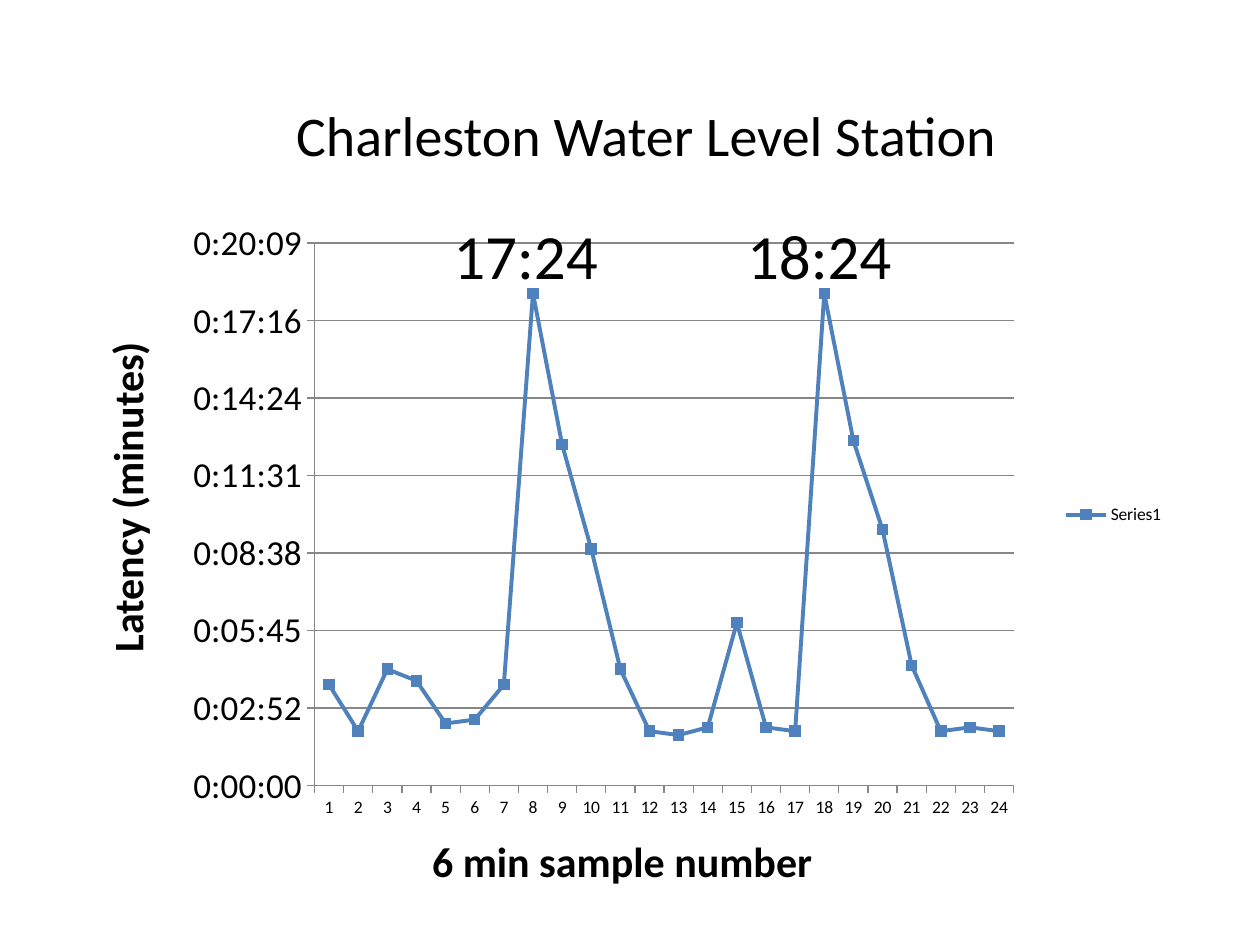
"""Build the slide charting water level latency per six-minute sample."""
from lxml.etree import SubElement
from pptx import Presentation
from pptx.chart.data import CategoryChartData
from pptx.dml.color import RGBColor as RGB
from pptx.enum.chart import XL_CHART_TYPE as CT, XL_LEGEND_POSITION as LP
from pptx.enum.chart import XL_MARKER_STYLE as MS, XL_TICK_MARK as TM
from pptx.enum.text import MSO_AUTO_SIZE as AS
from pptx.oxml.ns import qn
from pptx.util import Cm, Pt

FONT = "Calibri"
COLORS = {"text": "000000", "series": "4F81BD", "grid": "878787"}
LATENCY = [
    0.0026, 0.0014, 0.003, 0.0027, 0.0016, 0.0017, 0.0026, 0.0127,
    0.0088, 0.0061, 0.003, 0.0014, 0.0013, 0.0015, 0.0042, 0.0015,
    0.0014, 0.0127, 0.0089, 0.0066, 0.0031, 0.0014, 0.0015, 0.0014,
]
CHART_BOX = (2.34, 3.81, 21.39, 13.13)
PLOT = {"x": 0.187, "y": 0.083, "w": 0.659, "h": 0.833}
LABELS = [
    ("Charleston Water Level Station", (5.72, 1.9, 14.78, 1.63), 32, False, 0),
    ("17:24", (8.89, 4.24, 3.45, 1.8), 36, False, 0),
    ("18:24", (14.81, 4.24, 3.45, 1.8), 36, False, 0),
    ("6 min sample number", (8.46, 16.71, 8.26, 1.27), 24, True, 0),
    ("Latency (minutes)", (-0.86, 9.35, 6.83, 1.27), 24, True, 270),
]


def color(name):
    return RGB.from_string(COLORS[name])


def style_font(font, size, bold=False):
    font.name, font.size, font.bold = FONT, Pt(size), bold
    font.color.rgb = color("text")


def style_line(line, name, width):
    line.color.rgb = color(name)
    line.width = Pt(width)


def place_plot(chart):
    area = chart._chartSpace.chart.plotArea
    for old in area.findall(qn("c:layout")):
        area.remove(old)
    layout = SubElement(area, qn("c:layout"))
    area.insert(0, layout)
    manual = SubElement(layout, qn("c:manualLayout"))
    settings = [("layoutTarget", "inner"), ("xMode", "edge"), ("yMode", "edge")]
    for tag, val in settings + list(PLOT.items()):
        SubElement(manual, qn(f"c:{tag}")).set("val", str(val))


def add_latency_chart(s):
    data = CategoryChartData(number_format="h:mm:ss;@")
    data.categories = [str(n) for n in range(1, len(LATENCY) + 1)]
    data.add_series("Series1", LATENCY)
    chart = s.shapes.add_chart(CT.LINE_MARKERS, *map(Cm, CHART_BOX), data).chart
    style_font(chart.font, 10)
    chart.has_title = False
    chart.has_legend = True
    chart.legend.position = LP.RIGHT
    chart.legend.include_in_layout = False
    place_plot(chart)

    cat, val = chart.category_axis, chart.value_axis
    for axis, size in ((cat, 10), (val, 20)):
        axis.major_tick_mark = TM.CROSS if axis is None else TM.OUTSIDE
        axis.minor_tick_mark = TM.NONE
        style_font(axis.tick_labels.font, size)
        style_line(axis.format.line, "grid", 0.75)
    val.minimum_scale, val.maximum_scale, val.major_unit = 0, 0.014, 0.002
    val.tick_labels.number_format = "h:mm:ss;@"
    val.tick_labels.number_format_is_linked = False
    val.has_major_gridlines = True
    style_line(val.major_gridlines.format.line, "grid", 0.75)

    plot = chart.plots[0]
    plot.vary_by_categories = False
    series = plot.series[0]
    series.smooth = False
    style_line(series.format.line, "series", 2.25)
    marker = series.marker
    marker.style, marker.size = MS.SQUARE, 6
    marker.format.fill.solid()
    marker.format.fill.fore_color.rgb = color("series")
    style_line(marker.format.line, "series", 0.75)


def add_label(s, text, box, size, bold, rotation):
    sp = s.shapes.add_textbox(*map(Cm, box))
    sp.rotation = rotation
    tf = sp.text_frame
    tf.word_wrap = False
    tf.auto_size = AS.SHAPE_TO_FIT_TEXT
    r = tf.paragraphs[0].add_run()
    r.text = text
    style_font(r.font, size, bold)


def main():
    prs = Presentation()
    prs.slide_width, prs.slide_height = Cm(25.4), Cm(19.05)
    s = prs.slides.add_slide(prs.slide_layouts[6])
    add_latency_chart(s)
    for label in LABELS:
        add_label(s, *label)
    prs.save("out.pptx")


if __name__ == "__main__":
    main()
